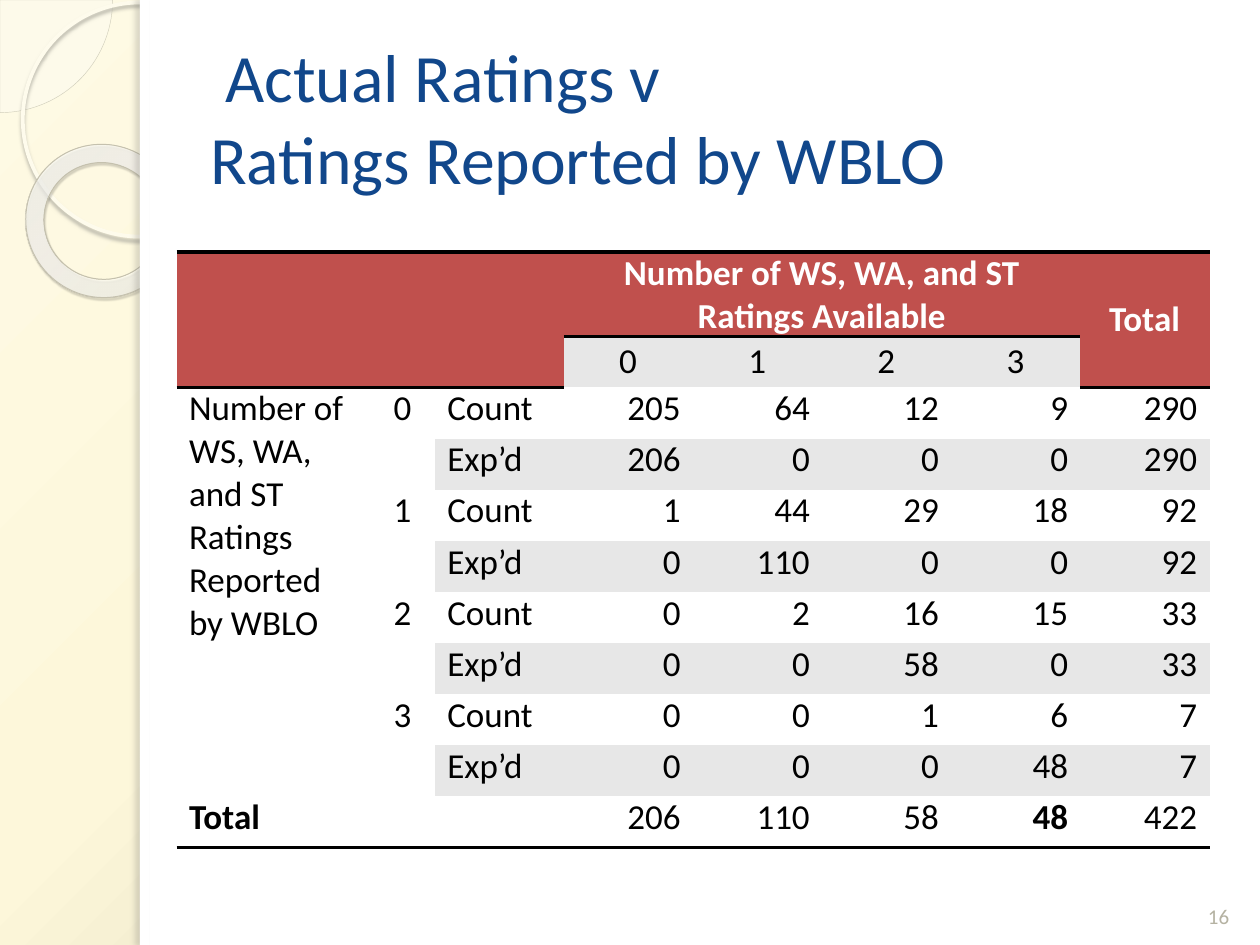
from pptx import Presentation
from pptx.dml.color import RGBColor
from pptx.enum.shapes import MSO_SHAPE
from pptx.enum.text import MSO_ANCHOR, PP_ALIGN
from pptx.oxml import parse_xml
from pptx.oxml.ns import nsdecls, qn
from pptx.util import Cm, Pt

FONT = "Calibri"
WHITE = RGBColor(0xFF, 0xFF, 0xFF)
BLACK = RGBColor(0x00, 0x00, 0x00)
NAVY = RGBColor(0x11, 0x47, 0x8B)
RED = RGBColor(0xC0, 0x50, 0x4D)
BAND = RGBColor(0xE7, 0xE7, 0xE7)
NUMBER_GREY = RGBColor(0xB5, 0xB2, 0xA2)
CREAM = RGBColor(0xFE, 0xFA, 0xE4)
CREAM_MID = RGBColor(0xFD, 0xF7, 0xDA)
CREAM_DARK = RGBColor(0xC2, 0xBD, 0xA3)
PIE_FILL = RGBColor(0xFD, 0xFD, 0xF9)
PIE_LINE = RGBColor(0xD1, 0xCE, 0xBB)
CIRCLE_LINE = RGBColor(0xFE, 0xFB, 0xEC)
CIRCLE_SHADOW = RGBColor(0xB2, 0xB0, 0xA4)
RING_LIGHT = RGBColor(0xFE, 0xFD, 0xFA)
RING_MID = RGBColor(0xFF, 0xFF, 0xFC)
RING_DARK = RGBColor(0xE2, 0xDB, 0xB7)
RING_LINE = RGBColor(0xC5, 0xC1, 0xAE)
RING_SHADOW = RGBColor(0x5A, 0x58, 0x50)
EDGE_SHADOW = RGBColor(0x77, 0x75, 0x6F)

HEADER_MARGINS = (0.08, 0.1)
BODY_MARGINS = (0.25, 0.25)
RATINGS = [
    ("Count", 205, 64, 12, 9, 290),
    ("Exp’d", 206, 0, 0, 0, 290),
    ("Count", 1, 44, 29, 18, 92),
    ("Exp’d", 0, 110, 0, 0, 92),
    ("Count", 0, 2, 16, 15, 33),
    ("Exp’d", 0, 0, 58, 0, 33),
    ("Count", 0, 0, 1, 6, 7),
    ("Exp’d", 0, 0, 0, 48, 7),
]
TOTALS = (206, 110, 58, 48, 422)


def color_xml(color, alpha=100):
    return f'<a:srgbClr val="{color}"><a:alpha val="{alpha * 1000}"/></a:srgbClr>'


def set_circular_gradient(properties, stops, focus):
    """Swap a solid fill for a circular gradient; focus is left, top, right, bottom in percent."""
    stops_xml = "".join(
        f'<a:gs pos="{position * 1000}">{color_xml(color, alpha)}</a:gs>'
        for position, color, alpha in stops)
    left, top, right, bottom = (value * 1000 for value in focus)
    gradient = parse_xml(
        f'<a:gradFill {nsdecls("a")} rotWithShape="1"><a:gsLst>{stops_xml}</a:gsLst>'
        f'<a:path path="circle"><a:fillToRect l="{left}" t="{top}" r="{right}" b="{bottom}"/>'
        '</a:path></a:gradFill>')
    properties.replace(properties.find(qn("a:solidFill")), gradient)


def set_shadow(shape, color, alpha, blur, distance, angle):
    effects = shape._element.spPr.find(qn("a:effectLst"))
    effects.append(parse_xml(
        f'<a:outerShdw {nsdecls("a")} blurRad="{Pt(blur)}" dist="{Pt(distance)}" '
        f'dir="{angle * 60000}" algn="tl" rotWithShape="0">{color_xml(color, alpha)}</a:outerShdw>'))


def add_plain_shape(slide, kind, box, fill=None, line=None, line_width=0):
    shape = slide.shapes.add_shape(kind, *(Cm(value) for value in box))
    shape.shadow.inherit = False
    if fill is None:
        shape.fill.background()
    else:
        shape.fill.solid()
        shape.fill.fore_color.rgb = fill
    if line is None:
        shape.line.fill.background()
    else:
        shape.line.color.rgb = line
        shape.line.width = Pt(line_width)
    return shape


def write_lines(paragraph, lines, size, color, bold=False, align=PP_ALIGN.LEFT):
    paragraph.alignment = align
    for index, text in enumerate(lines):
        if index:
            paragraph.add_line_break()
        run = paragraph.add_run()
        run.text = text
        run.font.name = FONT
        run.font.size = Pt(size)
        run.font.bold = bold
        run.font.color.rgb = color


def add_text(slide, box, lines, size, color, anchor, align=PP_ALIGN.LEFT):
    frame = slide.shapes.add_textbox(*(Cm(value) for value in box)).text_frame
    frame.word_wrap = True
    frame.vertical_anchor = anchor
    write_lines(frame.paragraphs[0], lines, size, color, align=align)


def paint_background(slide):
    slide.background.fill.solid()
    properties = slide._element.find(".//" + qn("p:bgPr"))
    stops = [(0, CREAM, 100), (40, CREAM_MID, 100), (100, CREAM_DARK, 100)]
    set_circular_gradient(properties, stops, (-24, -20, 124, 120))


def add_sidebar(slide, left, top):
    pie = add_plain_shape(slide, MSO_SHAPE.PIE, (left - 2.27, top - 2.27, 4.54, 4.54),
                          PIE_FILL, PIE_LINE, 0.25)
    pie.adjustments[0] = 0
    pie.adjustments[1] = 54
    pie._element.spPr.find(qn("a:solidFill"))[0].append(
        parse_xml(f'<a:alpha {nsdecls("a")} val="33000"/>'))

    circle = add_plain_shape(slide, MSO_SHAPE.OVAL, (left + 0.46, top + 0.05, 4.72, 4.72),
                             line=CIRCLE_LINE, line_width=2.15)
    set_shadow(circle, CIRCLE_SHADOW, 85, 2, 2, 90)

    ring = add_plain_shape(slide, MSO_SHAPE.DONUT, (left + 0.51, top + 2.92, 3.12, 3.07),
                           RING_LIGHT, RING_LINE, 0.58)
    ring.adjustments[0] = 0.12
    ring.rotation = 38.6
    stops = [(0, RING_LIGHT, 70), (70, RING_MID, 55), (100, RING_DARK, 60)]
    set_circular_gradient(ring._element.spPr, stops, (-408, -50, 508, 150))
    set_shadow(ring, RING_SHADOW, 35, 1, 1.2, 75)


def add_panel(slide, left, top, width, height):
    add_plain_shape(slide, MSO_SHAPE.RECTANGLE, (left, top, width, height), WHITE)
    edge = add_plain_shape(slide, MSO_SHAPE.RECTANGLE, (left, top, 0.2, height), WHITE)
    set_shadow(edge, EDGE_SHADOW, 25, 3, 3, 180)


def set_borders(cell, sides):
    properties = cell._tc.get_or_add_tcPr()
    for index, side in enumerate(sides):
        properties.insert(index, parse_xml(
            f'<a:ln{side} {nsdecls("a")} w="{Pt(2)}"><a:solidFill>{color_xml(BLACK)}'
            f'</a:solidFill></a:ln{side}>'))


def fill_cell(cell, lines=(), fill=WHITE, color=BLACK, bold=False, align=PP_ALIGN.LEFT,
              anchor=MSO_ANCHOR.TOP, margins=BODY_MARGINS, borders=""):
    cell.fill.solid()
    cell.fill.fore_color.rgb = fill
    cell.margin_left, cell.margin_right = (Cm(value) for value in margins)
    cell.margin_top = cell.margin_bottom = 0
    cell.vertical_anchor = anchor
    write_lines(cell.text_frame.paragraphs[0], lines, 20, color, bold, align)
    set_borders(cell, borders)


def fill_header(table):
    table.cell(0, 0).merge(table.cell(1, 2))
    table.cell(0, 3).merge(table.cell(0, 6))
    table.cell(0, 7).merge(table.cell(1, 7))
    style = dict(color=WHITE, bold=True, align=PP_ALIGN.CENTER,
                 margins=HEADER_MARGINS, borders="TB")
    fill_cell(table.cell(0, 0), fill=RED, borders="TB")
    fill_cell(table.cell(0, 3), ["Number of WS, WA, and ST", "Ratings Available"], RED,
              anchor=MSO_ANCHOR.BOTTOM, **style)
    fill_cell(table.cell(0, 7), ["Total"], RED, anchor=MSO_ANCHOR.MIDDLE, **style)
    for rating in range(4):
        fill_cell(table.cell(1, 3 + rating), [str(rating)], BAND, align=PP_ALIGN.CENTER,
                  anchor=MSO_ANCHOR.MIDDLE, margins=HEADER_MARGINS)


def fill_body(table):
    stub = table.cell(2, 0)
    stub.merge(table.cell(9, 0))
    fill_cell(stub, ["Number of"])
    write_lines(stub.text_frame.add_paragraph(),
                ["WS, WA, and ST Ratings Reported by WBLO"], 20, BLACK)
    for rating in range(4):
        row = 2 + 2 * rating
        table.cell(row, 1).merge(table.cell(row + 1, 1))
        fill_cell(table.cell(row, 1), [str(rating)], align=PP_ALIGN.CENTER)
    for row, (label, *values) in enumerate(RATINGS, start=2):
        fill = BAND if row % 2 else WHITE
        fill_cell(table.cell(row, 2), [label], fill)
        for column, value in enumerate(values, start=3):
            fill_cell(table.cell(row, column), [str(value)], fill, align=PP_ALIGN.RIGHT)


def fill_totals(table):
    table.cell(10, 0).merge(table.cell(10, 1))
    fill_cell(table.cell(10, 0), ["Total"], bold=True, borders="B")
    fill_cell(table.cell(10, 2), borders="B")
    for column, value in enumerate(TOTALS, start=3):
        fill_cell(table.cell(10, column), [str(value)], bold=column == 6,
                  align=PP_ALIGN.RIGHT, borders="B")


def add_ratings_table(slide, left, top, width, height):
    frame = slide.shapes.add_table(11, 8, Cm(left), Cm(top), Cm(width), Cm(height))
    table = frame.table
    table.first_row = table.horz_banding = False
    style_id = table._tbl.tblPr.find(qn("a:tableStyleId"))
    style_id.text = "{2D5ABB26-0587-4C30-8999-92F81FD0307C}"  # no style, no grid
    for index, column in enumerate(table.columns):
        column.width = Cm(width * (3, 1, 2, 2, 2, 2, 2, 2)[index] / 16)
    for index, row in enumerate(table.rows):
        row.height = Cm(1.7 if index == 0 else (height - 1.7) / 10)
    fill_header(table)
    fill_body(table)
    fill_totals(table)


def main():
    presentation = Presentation()
    presentation.slide_width, presentation.slide_height = Cm(25.4), Cm(19.05)
    slide = presentation.slides.add_slide(presentation.slide_layouts[6])
    paint_background(slide)
    add_sidebar(slide, 0, 0)
    add_panel(slide, 2.82, 0, 22.58, 19.05)
    add_text(slide, (3.99, 0.76, 20.83, 3.18), [" Actual Ratings v ", "Ratings Reported by WBLO"],
             38.7, NAVY, MSO_ANCHOR.MIDDLE)
    add_ratings_table(slide, 3.56, 5.08, 20.83, 12)
    add_text(slide, (23.93, 17.53, 1.27, 1.32), ["16"], 12, NUMBER_GREY,
             MSO_ANCHOR.BOTTOM, PP_ALIGN.CENTER)
    presentation.save("out.pptx")


if __name__ == "__main__":
    main()
